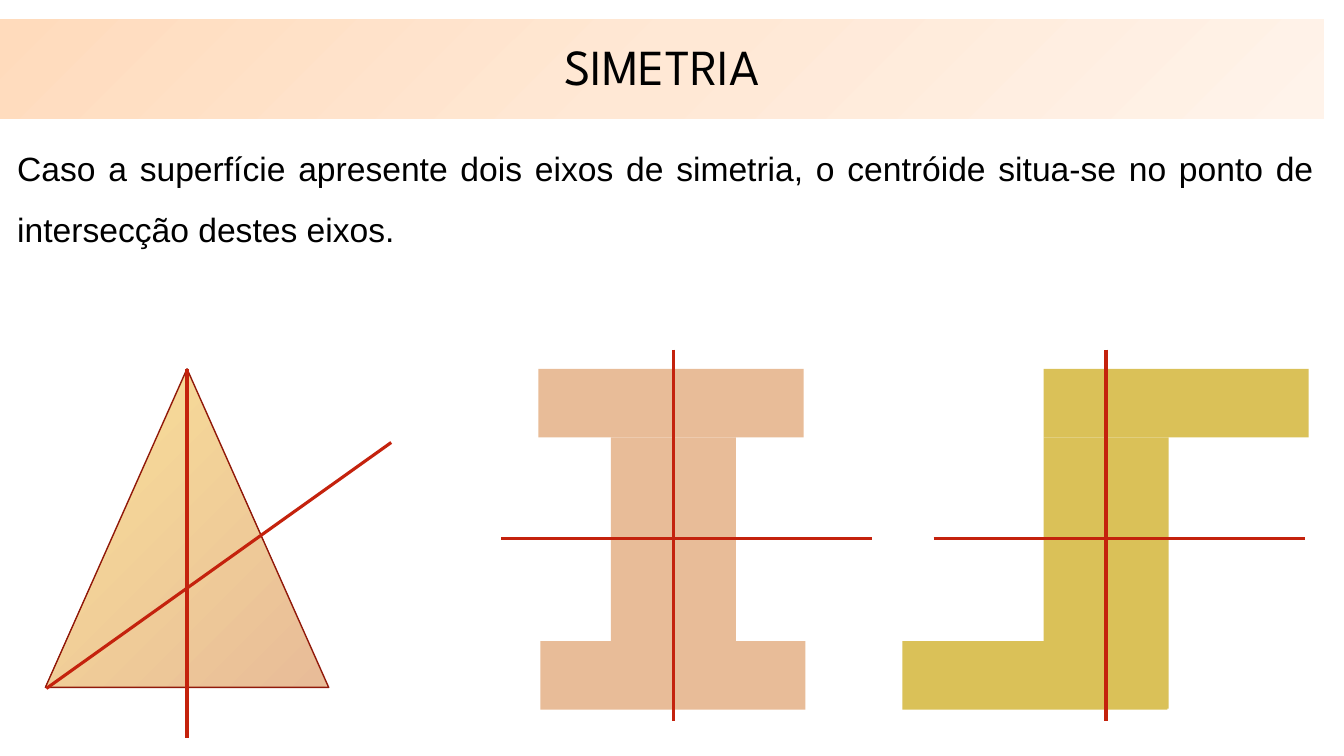
from pptx import Presentation
from pptx.dml.color import RGBColor
from pptx.enum.shapes import MSO_CONNECTOR, MSO_SHAPE
from pptx.enum.text import MSO_ANCHOR, MSO_AUTO_SIZE, PP_ALIGN
from pptx.oxml import parse_xml
from pptx.oxml.ns import nsdecls, qn
from pptx.util import Inches, Pt

HUES = {"text": "000000", "paper": "FFFFFF", "axis": "C4220D", "edge": "91190A",
        "beam": "E8BC98", "zed": "DAC158"}
BAND = [(0, "FFDBBC"), (50, "FFE8D5"), (100, "FFF3EA")]
GLOW = [(0, "FAE298"), (99, "E8BC98"), (100, "FCF5E0")]

TITLE = {"font": "League Spartan", "size": 36, "para": {
    "alignment": PP_ALIGN.CENTER, "line_spacing": 0.9, "space_before": Pt(0)}}
BODY = {"font": "Arial", "size": 24, "para": {
    "alignment": PP_ALIGN.JUSTIFY, "line_spacing": 1.5, "space_before": Pt(0)}}


def color(name):
    return RGBColor.from_string(HUES[name])


def shade(shape, stops):
    """Fill with a gradient that spreads from the top left corner."""
    shape.fill.background()
    marks = "".join(f'<a:gs pos="{pos * 1000}"><a:srgbClr val="{hue}"/></a:gs>'
                    for pos, hue in stops)
    grad = parse_xml(f'<a:gradFill {nsdecls("a")} rotWithShape="1"><a:gsLst>{marks}</a:gsLst>'
                     '<a:path path="circle"><a:fillToRect r="100000" b="100000"/></a:path>'
                     '</a:gradFill>')
    props = shape.element.spPr
    props.replace(props.find(qn("a:noFill")), grad)


def write(holder, box, text, style, anchor):
    """Move a placeholder to its box and set its text."""
    holder.left, holder.top, holder.width, holder.height = map(Inches, box)
    frame = holder.text_frame
    frame.text = text
    frame.word_wrap = True
    frame.auto_size = MSO_AUTO_SIZE.NONE
    frame.vertical_anchor = anchor
    para = frame.paragraphs[0]
    props = para._p.get_or_add_pPr()
    props.set("marL", "0")
    props.set("indent", "0")
    props.append(parse_xml(f'<a:buNone {nsdecls("a")}/>'))
    for key, value in style["para"].items():
        setattr(para, key, value)
    font = para.runs[0].font
    font.name, font.size = style["font"], Pt(style["size"])
    font.color.rgb = color("text")


def draw(shapes, kind, box):
    shape = shapes.add_shape(kind, *map(Inches, box))
    shape.shadow.inherit = False
    return shape


def axis(shapes, start, end):
    line = shapes.add_connector(MSO_CONNECTOR.STRAIGHT, *map(Inches, start + end))
    line.line.color.rgb = color("axis")
    line.line.width = Pt(2.25)
    line.element.spPr.append(parse_xml(f'<a:effectLst {nsdecls("a")}/>'))


def wedge(shapes, left, top, width, height):
    """Triangle with its median lines."""
    shape = draw(shapes, MSO_SHAPE.ISOSCELES_TRIANGLE, (left, top, width, height))
    shade(shape, GLOW)
    shape.line.color.rgb = color("edge")
    shape.line.width = Pt(1)
    axis(shapes, (left + 3.43, top + 0.73), (left + 0.01, top + height + 0.01))
    mid = left + width / 2
    axis(shapes, (mid, top), (mid, top + height + 0.5))


def profile(shapes, group, left, top, hue, upper, web, lower):
    """Two flanges and a web, each shifted from the left, with crossed axes."""
    bars = [(web, 0.68, 1.24, 2.69), (upper, 0, 2.63, 0.68), (lower, 2.7, 2.63, 0.68)]
    for dx, dy, width, height in bars:
        bar = draw(group, MSO_SHAPE.RECTANGLE, (left + dx, top + dy, width, height))
        bar.fill.solid()
        bar.fill.fore_color.rgb = color(hue)
        bar.line.fill.background()
    mid, level = left + web + 0.62, top + 1.68
    axis(shapes, (mid, top - 0.19), (mid, top + 3.49))
    axis(shapes, (mid - 1.71, level), (mid + 1.97, level))


def main():
    deck = Presentation()
    deck.slide_width, deck.slide_height = Inches(13.33), Inches(7.5)
    slide = deck.slides.add_slide(deck.slide_layouts[1])
    shapes = slide.shapes

    # Heading band and statement
    title, body = slide.placeholders
    write(title, (0, 0.19, 13.13, 0.99), "SIMETRIA", TITLE, MSO_ANCHOR.MIDDLE)
    shade(title, BAND)
    write(body, (0.07, 1.22, 13.06, 1.31),
          "Caso a superfície apresente dois eixos de simetria, o centróide situa-se "
          "no ponto de intersecção destes eixos.", BODY, MSO_ANCHOR.TOP)
    body.fill.solid()
    body.fill.fore_color.rgb = color("paper")

    # Figures with their axes of symmetry
    top = 3.66
    wedge(shapes, 0.45, top, 2.81, 3.16)
    group = shapes.add_group_shape().shapes
    profile(shapes, group, 5.34, top, "beam", upper=0, web=0.72, lower=0.02)
    profile(shapes, shapes, 8.95, top, "zed", upper=1.4, web=1.4, lower=0)

    deck.save("out.pptx")


if __name__ == "__main__":
    main()
